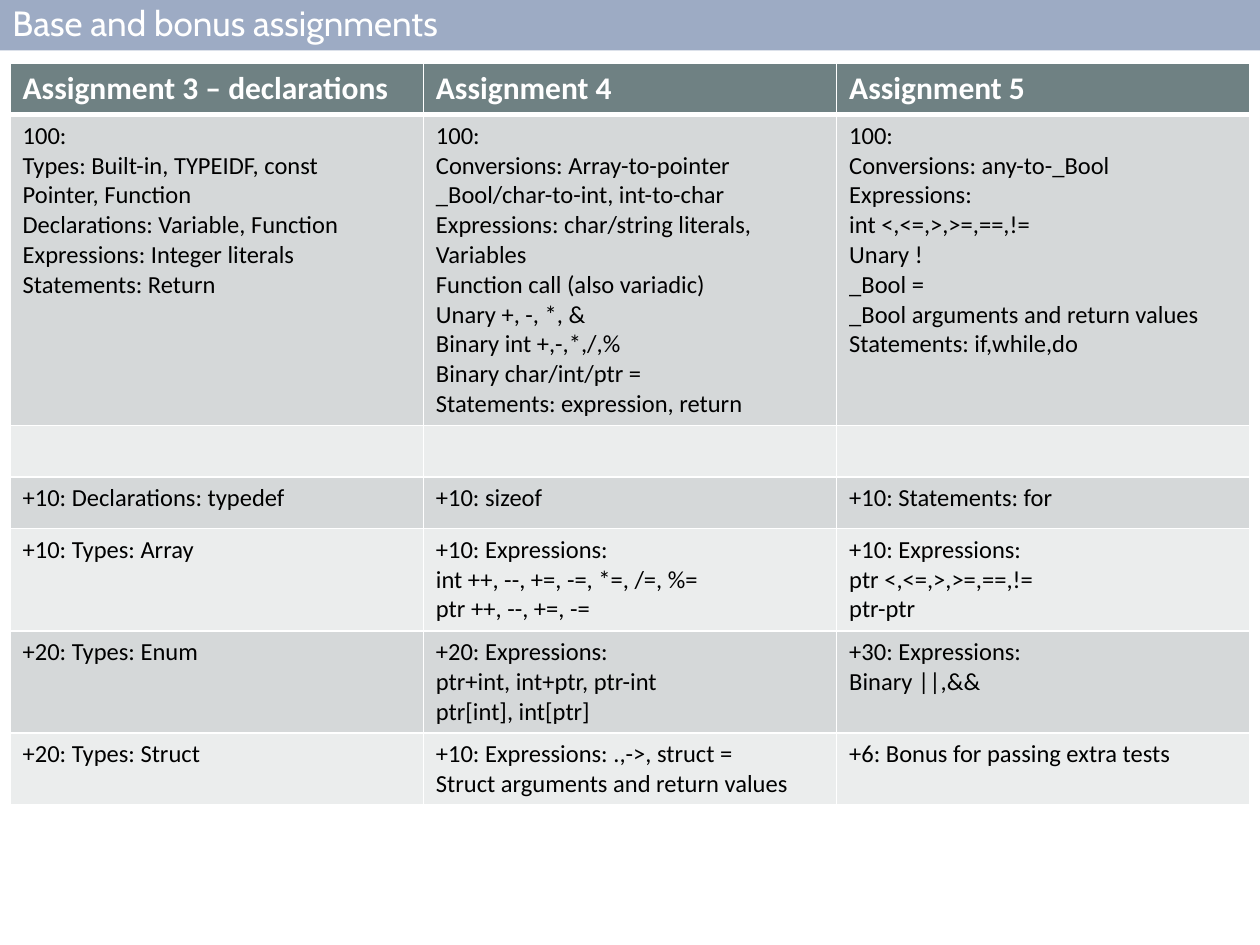
import pptx
import pptx.util
import pptx.dml.color
import pptx.enum.shapes
import pptx.enum.text
import pptx.oxml.ns
from lxml import etree

Inches, Pt = pptx.util.Inches, pptx.util.Pt
qn = pptx.oxml.ns.qn

# Content: "\n" starts a paragraph, "\v" breaks a line within one
TITLE = "Base and bonus assignments"
ROWS = [
    ("Assignment 3 – declarations", "Assignment 4", "Assignment 5"),
    (
        "100:\nTypes: Built-in, TYPEIDF, const\vPointer, Function\n"
        "Declarations: Variable, Function\nExpressions: Integer literals\n"
        "Statements: Return",
        "100:\nConversions: Array-to-pointer\v_Bool/char-to-int, int-to-char\n"
        "Expressions: char/string literals, Variables\v"
        "Function call (also variadic)\vUnary +, -, *, &\n"
        "Binary int +,-,*,/,%\vBinary char/int/ptr =\n"
        "Statements: expression, return",
        "100:\nConversions: any-to-_Bool\nExpressions:\n"
        "int <,<=,>,>=,==,!=\vUnary !\n_Bool =\n"
        "_Bool arguments and return values\nStatements: if,while,do",
    ),
    ("", "", ""),
    ("+10: Declarations: typedef", "+10: sizeof", "+10: Statements: for"),
    (
        "+10: Types: Array",
        "+10: Expressions:\nint ++, --, +=, -=, *=, /=, %=\nptr ++, --, +=, -=",
        "+10: Expressions:\nptr <,<=,>,>=,==,!=\nptr-ptr",
    ),
    (
        "+20: Types: Enum",
        "+20: Expressions:\nptr+int, int+ptr, ptr-int\nptr[int], int[ptr]",
        "+30: Expressions:\nBinary ||,&&",
    ),
    (
        "+20: Types: Struct",
        "+10: Expressions: .,->, struct =\nStruct arguments and return values",
        "+6: Bonus for passing extra tests",
    ),
]
HEAD, BANDS = "6F8183", ("EBEDED", "D5D8D9")
COL, ROW = 3.28, 0.41


def color(code):
    return pptx.dml.color.RGBColor.from_string(code)


def paint(shape, code):
    shape.fill.solid()
    shape.fill.fore_color.rgb = color(code)


def style(frame, size, face, code, bold=False):
    for para in frame.paragraphs:
        for run in para.runs:
            font = run.font
            font.size, font.name, font.bold = Pt(size), face, bold
            font.color.rgb = color(code)
        # Line breaks take the same size as the text
        for br in para._p.findall(qn("a:br")):
            etree.SubElement(br, qn("a:rPr"), sz=str(size * 100))


def border(cell, top, bottom):
    props = cell._tc.get_or_add_tcPr()
    sides = (("L", 1), ("R", 1), ("T", top), ("B", bottom))
    for at, (side, width) in enumerate(sides):
        line = etree.Element(qn("a:ln" + side), w=str(Pt(width)))
        fill = etree.SubElement(line, qn("a:solidFill"))
        etree.SubElement(fill, qn("a:srgbClr"), val="FFFFFF")
        props.insert(at, line)


def main():
    deck = pptx.Presentation()
    deck.slide_width, deck.slide_height = Inches(10), Inches(7.5)
    slide = deck.slides.add_slide(deck.slide_layouts[6])

    # Title bar
    bar = slide.shapes.add_shape(
        pptx.enum.shapes.MSO_SHAPE.RECTANGLE, 0, 0, Inches(10), Inches(0.4))
    bar.shadow.inherit = False
    bar.line.fill.background()
    paint(bar, "9DABC4")
    frame = bar.text_frame
    frame.text = TITLE
    frame.vertical_anchor = pptx.enum.text.MSO_ANCHOR.MIDDLE
    frame.paragraphs[0].alignment = pptx.enum.text.PP_ALIGN.LEFT
    frame.paragraphs[0].line_spacing = 0.9
    style(frame, 20, "Cabin", "FFFFFF")

    # Assignment table; rows grow with their text
    count = len(ROWS[0])
    table = slide.shapes.add_table(
        len(ROWS), count, Inches(0.08), Inches(0.5),
        Inches(COL * count), Inches(ROW * len(ROWS))).table
    for col in table.columns:
        col.width = Inches(COL)
    for r, row in enumerate(ROWS):
        table.rows[r].height = Inches(ROW)
        head = r == 0
        for c, text in enumerate(row):
            cell = table.cell(r, c)
            cell.text_frame.text = text
            paint(cell, HEAD if head else BANDS[r % 2])
            border(cell, 3 if r == 1 else 1, 3 if head else 1)
            style(cell.text_frame, 18 if head else 14, "Calibri",
                  "FFFFFF" if head else "000000", head)

    deck.save("out.pptx")


if __name__ == "__main__":
    main()
